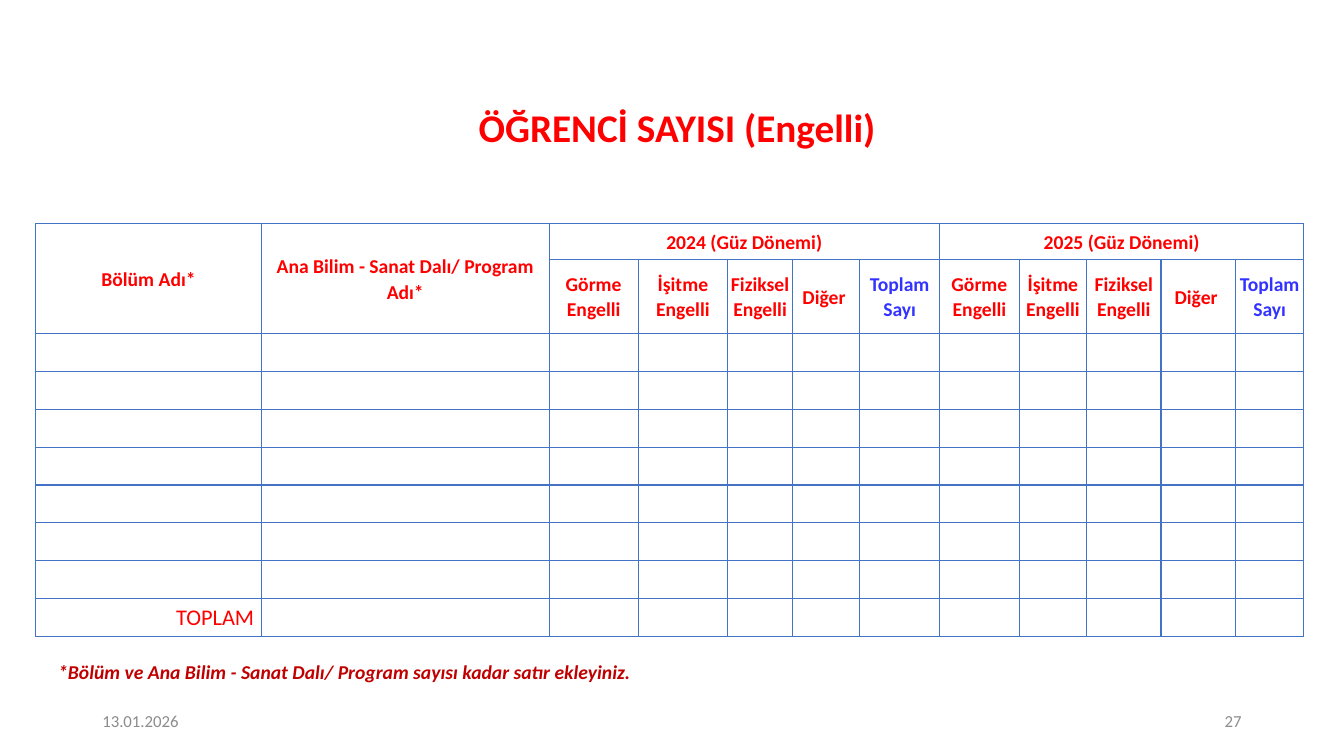
from lxml import etree
from pptx import Presentation
from pptx.dml.color import RGBColor
from pptx.enum.text import MSO_ANCHOR, MSO_AUTO_SIZE, PP_ALIGN
from pptx.oxml.ns import qn
from pptx.util import Emu, Pt

LEFT, CENTER, RIGHT = PP_ALIGN.LEFT, PP_ALIGN.CENTER, PP_ALIGN.RIGHT
TOP, MIDDLE = MSO_ANCHOR.TOP, MSO_ANCHOR.MIDDLE
NO_AUTOFIT = MSO_AUTO_SIZE.NONE

RED = RGBColor(0xFF, 0x00, 0x00)
DARK_RED = RGBColor(0xC0, 0x00, 0x00)
BLUE = RGBColor(0x33, 0x33, 0xFF)
GRAY = RGBColor(0x8C, 0x8C, 0x8C)
BORDER = RGBColor(0x44, 0x72, 0xC4)

FONT = "Calibri"
TITLE_ONLY = 5
COLUMN_WIDTHS = [215, 274, 85, 85, 62, 64, 76, 76, 64, 71, 71, 65]
ROW_HEIGHTS = [34, 71] + [36] * 8
DEPARTMENT_HEADINGS = ["Bölüm Adı*", "Ana Bilim - Sanat Dalı/ Program Adı*"]
TERMS = ["2024 (Güz Dönemi)", "2025 (Güz Dönemi)"]
DISABILITIES = ["Görme Engelli", "İşitme Engelli", "Fiziksel Engelli", "Diğer "]
TERM_HEADINGS = DISABILITIES + ["Toplam Sayı"]


def px(length):
    return Emu(length * 9525)


def write(frame, text, size, color, align=LEFT, bold=False, italic=False, spacing=None):
    paragraph = frame.paragraphs[0]
    paragraph.alignment = align
    if spacing:
        paragraph.line_spacing = spacing
    run = paragraph.add_run()
    run.text = text
    run.font.name = FONT
    run.font.size = Pt(size)
    run.font.bold = bold
    run.font.italic = italic
    run.font.color.rgb = color


def add_title(slide, text):
    title = slide.shapes.title
    title.left, title.top, title.width, title.height = map(px, (70, 92, 1158, 63))
    title.text_frame.auto_size = NO_AUTOFIT
    title.text_frame.vertical_anchor = MIDDLE
    write(title.text_frame, text, 28, RED, CENTER, bold=True, spacing=0.9)


def add_label(slide, box, text, size, color, anchor=MIDDLE, **style):
    frame = slide.shapes.add_textbox(*map(px, box)).text_frame
    frame.word_wrap = True
    frame.vertical_anchor = anchor
    write(frame, text, size, color, **style)


def format_cell(cell):
    cell.margin_left = cell.margin_right = cell.margin_top = cell.margin_bottom = 0
    cell.vertical_anchor = MIDDLE
    cell.fill.background()
    properties = cell._tc.get_or_add_tcPr()
    for position, side in enumerate(("a:lnL", "a:lnR", "a:lnT", "a:lnB")):
        line = etree.Element(qn(side), w=str(Pt(1)))
        fill = etree.SubElement(line, qn("a:solidFill"))
        etree.SubElement(fill, qn("a:srgbClr"), val=str(BORDER))
        properties.insert(position, line)


def write_heading(cell, text, color=RED):
    write(cell.text_frame, text, 14, color, CENTER, bold=True, spacing=1.07)


def add_student_table(slide):
    box = map(px, (34, 213, sum(COLUMN_WIDTHS), sum(ROW_HEIGHTS)))
    table = slide.shapes.add_table(len(ROW_HEIGHTS), len(COLUMN_WIDTHS), *box).table
    table.first_row = table.horz_banding = False
    for column, width in zip(table.columns, COLUMN_WIDTHS):
        column.width = px(width)
    for row, height in zip(table.rows, ROW_HEIGHTS):
        row.height = px(height)
    for cell in table.iter_cells():
        format_cell(cell)

    for column, heading in enumerate(DEPARTMENT_HEADINGS):
        table.cell(0, column).merge(table.cell(1, column))
        write_heading(table.cell(0, column), heading)

    span = len(TERM_HEADINGS)
    for index, term in enumerate(TERMS):
        first = len(DEPARTMENT_HEADINGS) + index * span
        table.cell(0, first).merge(table.cell(0, first + span - 1))
        write_heading(table.cell(0, first), term)
        for column, heading in enumerate(TERM_HEADINGS, first):
            color = RED if heading in DISABILITIES else BLUE
            write_heading(table.cell(1, column), heading, color)

    total = table.cell(len(ROW_HEIGHTS) - 1, 0)
    total.margin_right = px(7)
    write(total.text_frame, "TOPLAM", 16, RED, RIGHT, spacing=1.07)


def main():
    deck = Presentation()
    deck.slide_width, deck.slide_height = px(1280), px(720)
    slide = deck.slides.add_slide(deck.slide_layouts[TITLE_ONLY])
    add_title(slide, "ÖĞRENCİ SAYISI (Engelli) ")
    add_label(slide, (88, 667, 288, 38), "13.01.2026", 12, GRAY)
    add_label(slide, (904, 667, 288, 38), "27", 12, GRAY, align=RIGHT)
    add_label(
        slide, (46, 624, 814, 33),
        "*Bölüm ve Ana Bilim - Sanat Dalı/ Program sayısı kadar satır ekleyiniz.",
        14, DARK_RED, anchor=TOP, bold=True, italic=True,
    )
    add_student_table(slide)
    deck.save("out.pptx")


if __name__ == "__main__":
    main()
